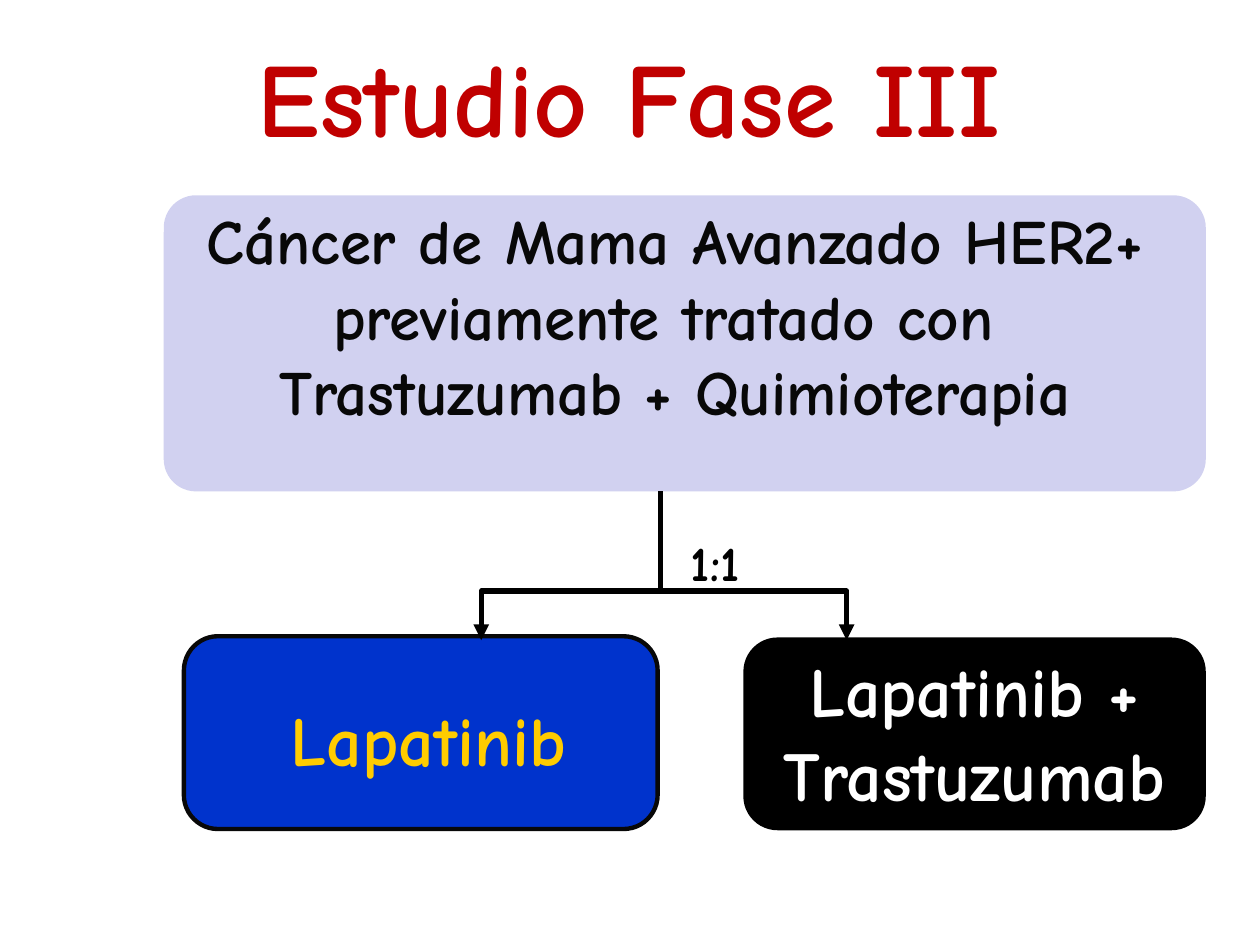
from lxml import etree
from pptx import Presentation
from pptx.dml.color import RGBColor
from pptx.enum.shapes import MSO_CONNECTOR, MSO_SHAPE
from pptx.enum.text import MSO_ANCHOR, MSO_AUTO_SIZE, PP_ALIGN
from pptx.oxml.ns import qn
from pptx.util import Inches, Pt

STRAIGHT = MSO_CONNECTOR.STRAIGHT
ROUNDED = MSO_SHAPE.ROUNDED_RECTANGLE
CENTER = PP_ALIGN.CENTER
MIDDLE, TOP, BOTTOM = MSO_ANCHOR.MIDDLE, MSO_ANCHOR.TOP, MSO_ANCHOR.BOTTOM
GROW, FIXED = MSO_AUTO_SIZE.SHAPE_TO_FIT_TEXT, MSO_AUTO_SIZE.NONE
FONT = "Comic Neue"
COLORS = {
    "title": "C00000",
    "lavender": "D1D1F0",
    "ink": "080808",
    "blue": "0033CC",
    "yellow": "FFCC00",
    "black": "000000",
    "white": "FFFFFF",
}


def write(box, paragraphs, color, anchor=TOP, wrap=True, fit=GROW, margin=None):
    frame = box.text_frame
    frame.word_wrap = wrap
    frame.auto_size = fit
    frame.vertical_anchor = anchor
    if margin is not None:
        frame.margin_left = frame.margin_right = margin
        frame.margin_top = frame.margin_bottom = margin
    for index, spans in enumerate(paragraphs):
        para = frame.add_paragraph() if index else frame.paragraphs[0]
        para.alignment = CENTER
        for text, size in spans:
            span = para.add_run()
            span.text = text
            span.font.name = FONT
            span.font.size = Pt(size)
            span.font.bold = True
            span.font.color.rgb = RGBColor.from_string(COLORS[color])


deck = Presentation()
deck.slide_width, deck.slide_height = Inches(10), Inches(7.5)
page = deck.slides.add_slide(deck.slide_layouts[5])
shapes = page.shapes

title = shapes.title
title.left, title.top = Inches(0.33), Inches(0.13)
title.width, title.height = Inches(9.33), Inches(1.25)
write(title, [[("Estudio Fase III", 60)]], "title", anchor=MIDDLE, fit=FIXED)

panels = [
    (1.3, 1.55, 8.27, 2.35, 0.109, "lavender", None),
    (5.9, 5.06, 3.67, 1.53, 0.177, "black", None),
    (1.46, 5.05, 3.76, 1.53, 0.177, "blue", "ink"),
]
for left, top, width, height, rounding, fill, outline in panels:
    panel = shapes.add_shape(ROUNDED, Inches(left), Inches(top), Inches(width), Inches(height))
    panel.adjustments[0] = rounding
    panel.shadow.inherit = False
    panel.fill.solid()
    panel.fill.fore_color.rgb = RGBColor.from_string(COLORS[fill])
    if outline:
        panel.line.color.rgb = RGBColor.from_string(COLORS[outline])
        panel.line.width = Pt(2.5)
    else:
        panel.line.fill.background()

population = [
    [("Cáncer de Mama Avanzado HER2+ previamente tratado con ", 36)],
    [("Trastuzumab + Quimioterapia", 36)],
]
labels = [
    (1.3, 1.55, 8.11, 1.92, population, "ink", {}),
    (2.06, 5.48, 2.86, 0.77, [[("Lapatinib", 40), (" ", 36)]], "yellow", {"wrap": False}),
    (5.9, 5.09, 3.67, 1.45, [[("Lapatinib + Trastuzumab", 40)]], "white", {}),
    (4.53, 4.22, 2.43, 0.47, [[("1:1 ", 28)]], "black", {"anchor": BOTTOM, "margin": 0}),
]
for left, top, width, height, paragraphs, color, options in labels:
    box = shapes.add_textbox(Inches(left), Inches(top), Inches(width), Inches(height))
    write(box, paragraphs, color, **options)

builder = shapes.build_freeform(Inches(3.82), Inches(5.08))
builder.add_line_segments(
    [(Inches(x), Inches(y)) for x, y in [(3.82, 4.69), (6.72, 4.69), (6.72, 5.08)]],
    close=False,
)
branches = builder.convert_to_shape()
branches.shadow.inherit = False
branches.fill.background()

stem = shapes.add_connector(STRAIGHT, Inches(5.24), Inches(4.68), Inches(5.24), Inches(3.9))
for line in (branches.line, stem.line):
    line.color.rgb = RGBColor.from_string(COLORS["black"])
    line.width = Pt(3)
etree.SubElement(stem.element.spPr, qn("a:effectLst"))

outline = branches.element.spPr.find(qn("a:ln"))
for end in ("a:headEnd", "a:tailEnd"):
    etree.SubElement(outline, qn(end), type="triangle")

deck.save("out.pptx")
